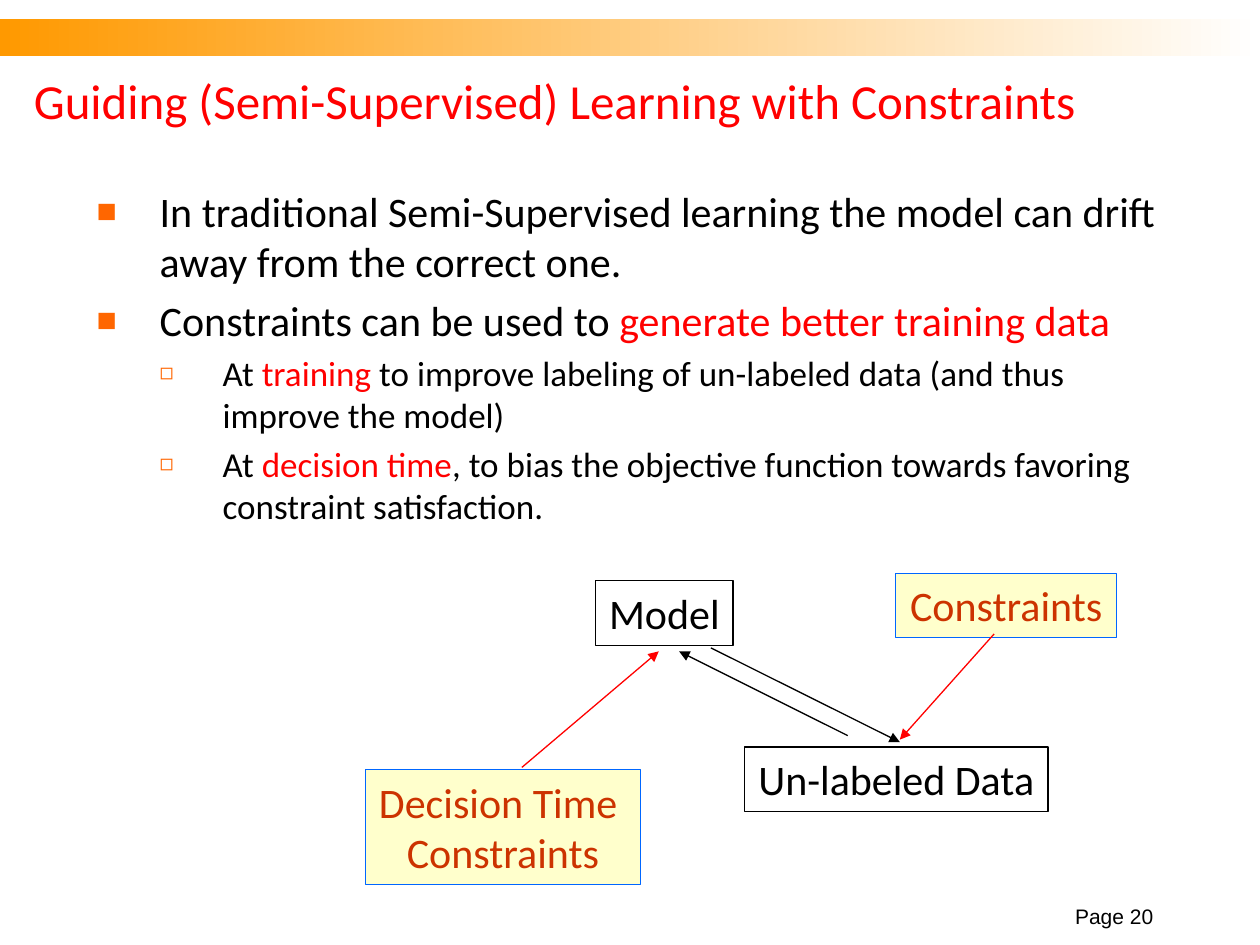
"""Build the slide on guiding semi-supervised learning with constraints."""
from lxml import etree
from pptx import Presentation
from pptx.dml.color import RGBColor
from pptx.enum.shapes import MSO_CONNECTOR, MSO_SHAPE
from pptx.enum.text import MSO_ANCHOR, MSO_AUTO_SIZE, PP_ALIGN
from pptx.oxml.ns import qn
from pptx.util import Cm, Pt

RECT = MSO_SHAPE.RECTANGLE
STRAIGHT = MSO_CONNECTOR.STRAIGHT
MIDDLE, BOTTOM, TOP = MSO_ANCHOR.MIDDLE, MSO_ANCHOR.BOTTOM, MSO_ANCHOR.TOP
LEFT, CENTER, RIGHT = PP_ALIGN.LEFT, PP_ALIGN.CENTER, PP_ALIGN.RIGHT
GROW = MSO_AUTO_SIZE.SHAPE_TO_FIT_TEXT
BLACK, RED, ORANGE = "000000", "FF0000", "FF6600"


def rgb(hex_color):
    return RGBColor.from_string(hex_color)


def style(p, size, color, font="Calibri"):
    for r in p.runs:
        r.font.size = Pt(size)
        r.font.name = font
        r.font.color.rgb = rgb(color)


prs = Presentation()
prs.slide_width, prs.slide_height = Cm(25.4), Cm(19.05)
s = prs.slides.add_slide(prs.slide_layouts[5])

band = s.shapes.add_shape(RECT, 0, Cm(0.38), prs.slide_width, Cm(0.76))
band.shadow.inherit = False
band.line.fill.background()
band.fill.gradient()
band.fill.gradient_angle = 0
for stop, color in zip(band.fill.gradient_stops, ("FF9900", "FFFFFF")):
    stop.color.rgb = rgb(color)

title = s.shapes.title
title.left, title.top, title.width, title.height = Cm(0.43), Cm(1.27), Cm(22.86), Cm(1.47)
tf = title.text_frame
tf.text = "Guiding (Semi-Supervised) Learning with Constraints"
tf.vertical_anchor = MIDDLE
tf.auto_size = MSO_AUTO_SIZE.NONE
tf.paragraphs[0].alignment = LEFT
style(tf.paragraphs[0], 28, RED)

page = s.shapes.add_textbox(Cm(20.96), Cm(18.21), Cm(2.54), Cm(0.64))
tf = page.text_frame
tf.text = "Page 20"
tf.word_wrap = True
tf.vertical_anchor = BOTTOM
tf.paragraphs[0].alignment = RIGHT
style(tf.paragraphs[0], 12, BLACK, "Arial")

points = [
    (0, [("In traditional Semi-Supervised learning the model can drift away from the correct one.", BLACK)]),
    (0, [("Constraints can be used to ", BLACK), ("generate better training data", RED)]),
    (1, [("At ", BLACK), ("training", RED),
         (" to improve labeling of un-labeled data (and thus improve the model)", BLACK)]),
    (1, [("At ", BLACK), ("decision time", RED),
         (", to bias the objective function towards favoring constraint satisfaction.", BLACK)]),
]
levels = [("■", "80000", 24), ("◻", "65000", 20)]
body = s.shapes.add_textbox(Cm(1.7), Cm(3.61), Cm(22.23), Cm(7.21))
tf = body.text_frame
tf.word_wrap = True
tf.auto_size = GROW
for i, (level, parts) in enumerate(points):
    char, percent, size = levels[level]
    p = tf.paragraphs[0] if i == 0 else tf.add_paragraph()
    p.level = level
    if i:
        p.space_before = Pt(size * 0.2)
    pPr = p._p.get_or_add_pPr()
    pPr.set("marL", str(Cm(1.27 * (level + 1))))
    pPr.set("indent", str(-Cm(1.27)))
    bullet_color = etree.SubElement(pPr, qn("a:buClr"))
    etree.SubElement(bullet_color, qn("a:srgbClr"), val=ORANGE)
    etree.SubElement(pPr, qn("a:buSzPct"), val=percent)
    etree.SubElement(pPr, qn("a:buFont"), typeface="Arial")
    etree.SubElement(pPr, qn("a:buChar"), char=char)
    for text, color in parts:
        r = p.add_run()
        r.text = text
        r.font.size = Pt(size)
        r.font.name = "Calibri"
        r.font.color.rgb = rgb(color)

plain = (None, BLACK, BLACK)
constraint = ("FFFFCC", "0066FF", "CC3300")
boxes = [
    ("Model", 12.01, 11.71, 2.77, 1.3, plain),
    ("Decision Time \nConstraints", 7.37, 15.52, 5.54, 2.31, constraint),
    ("Un-labeled Data", 15.01, 15.06, 6.12, 1.3, plain),
    ("Constraints", 18.06, 11.56, 4.45, 1.3, constraint),
]
for text, x, y, w, h, (fill, line, color) in boxes:
    sp = s.shapes.add_shape(RECT, Cm(x), Cm(y), Cm(w), Cm(h))
    sp.shadow.inherit = False
    if fill:
        sp.fill.solid()
        sp.fill.fore_color.rgb = rgb(fill)
    else:
        sp.fill.background()
    sp.line.color.rgb = rgb(line)
    sp.line.width = Pt(0.75)
    tf = sp.text_frame
    tf.text = text
    tf.word_wrap = False
    tf.auto_size = GROW
    tf.vertical_anchor = TOP
    for p in tf.paragraphs:
        p.alignment = CENTER
        style(p, 24, color)

arrows = [
    (14.33, 13.06, 18.14, 14.96, BLACK),
    (10.52, 15.47, 13.28, 13.13, RED),
    (17.09, 14.83, 13.69, 13.13, BLACK),
    (20.04, 12.78, 18.14, 14.91, RED),
]
for x1, y1, x2, y2, color in arrows:
    arrow = s.shapes.add_connector(STRAIGHT, Cm(x1), Cm(y1), Cm(x2), Cm(y2))
    arrow.line.color.rgb = rgb(color)
    arrow.line.width = Pt(0.75)
    etree.SubElement(arrow.line._get_or_add_ln(), qn("a:tailEnd"), type="triangle")
    etree.SubElement(arrow._element.spPr, qn("a:effectLst"))

prs.save("out.pptx")
